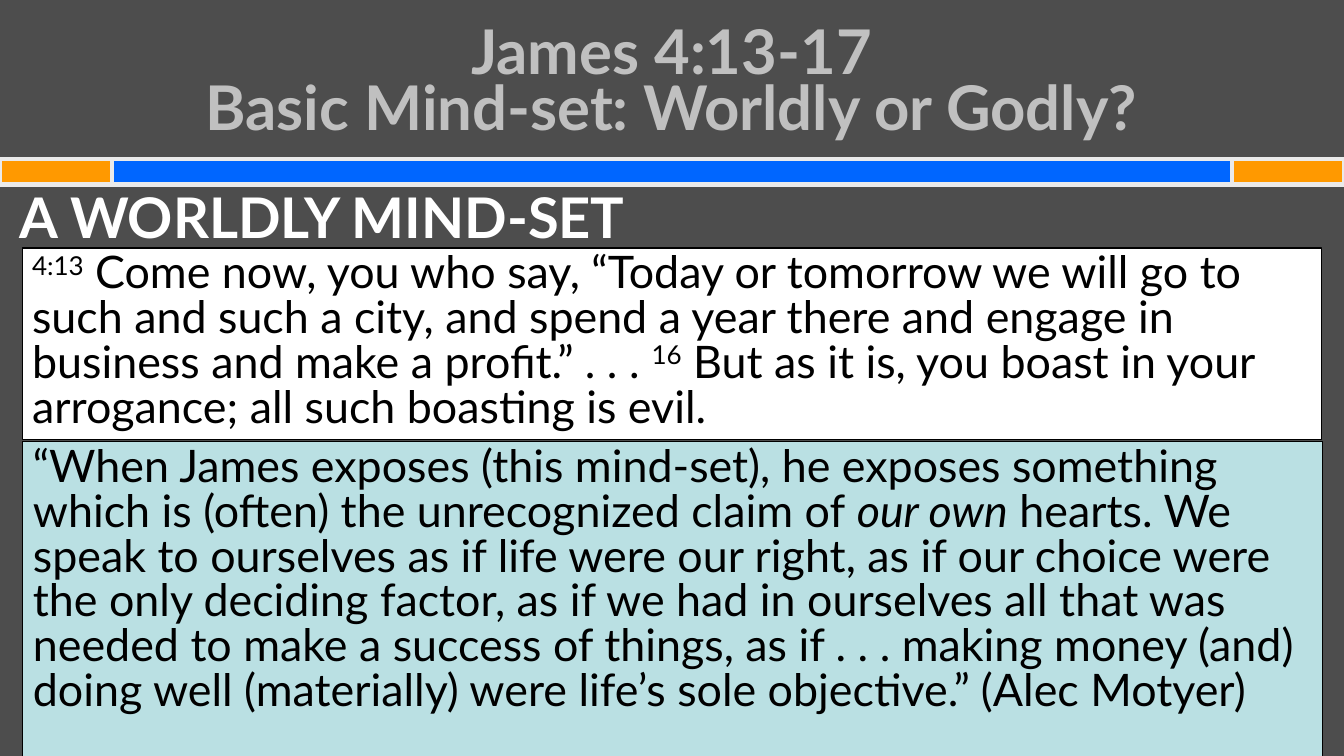
from pptx import Presentation
from pptx.dml.color import RGBColor
from pptx.enum.shapes import MSO_SHAPE
from pptx.enum.text import MSO_ANCHOR, PP_ALIGN
from pptx.util import Cm, Pt

RECTANGLE = MSO_SHAPE.RECTANGLE
TOP, MIDDLE = MSO_ANCHOR.TOP, MSO_ANCHOR.MIDDLE
LEFT, CENTER = PP_ALIGN.LEFT, PP_ALIGN.CENTER

CHARCOAL = RGBColor(0x4D, 0x4D, 0x4D)
SILVER = RGBColor(0xC0, 0xC0, 0xC0)
WHITE = RGBColor(0xFF, 0xFF, 0xFF)
BLACK = RGBColor(0, 0, 0)
BLUE = RGBColor(0x00, 0x66, 0xFF)
ORANGE = RGBColor(0xFF, 0x99, 0x00)
PALE_GRAY = RGBColor(0xEA, 0xEA, 0xEA)
PALE_TEAL = RGBColor(0xBA, 0xE0, 0xE3)
FONT = "Lato"
PAGE_WIDTH, PAGE_HEIGHT = 33.87, 19.05

TITLE = ["James 4:13-17", "Basic Mind-set: Worldly or Godly?"]
VERSE = [
    ("4:13", "super"),
    (" Come now, you who say, “Today or tomorrow we will go to such and such a city, "
     "and spend a year there and engage in business and make a profit.” . . . ", ""),
    ("16", "super"),
    (" But as it is, you boast in your arrogance; all such boasting is evil.", ""),
]
QUOTE = [
    ("“When James exposes (this mind-set), he exposes something which is (often) "
     "the unrecognized claim of ", ""),
    ("our own", "italic"),
    (" hearts. We speak to ourselves as if life were our right, as if our choice were "
     "the only deciding factor, as if we had in ourselves all that was needed to make "
     "a success of things, as if . . . making money (and) doing well (materially) "
     "were life’s sole objective.” (Alec Motyer)", ""),
]


def add_span(para, text, size=32, color=BLACK, bold=False, style=""):
    """Append formatted text to a paragraph."""
    span = para.add_run()
    span.text = text
    font = span.font
    font.name, font.size, font.bold = FONT, Pt(size), bold
    font.italic = style == "italic"
    font.color.rgb = color
    if style == "super":
        span._r.get_or_add_rPr().set("baseline", "30000")


def start_text(shape, spacing, align=LEFT, anchor=TOP):
    """Set up the text frame of a shape and return its first paragraph."""
    frame = shape.text_frame
    frame.word_wrap = True
    frame.vertical_anchor = anchor
    para = frame.paragraphs[0]
    para.alignment = align
    para.line_spacing = spacing
    return para


def add_panel(page, left, top, width, height, fill, line, weight):
    """Add a filled and outlined rectangle."""
    panel = page.shapes.add_shape(RECTANGLE, Cm(left), Cm(top), Cm(width), Cm(height))
    panel.shadow.inherit = False
    panel.fill.solid()
    panel.fill.fore_color.rgb = fill
    panel.line.color.rgb = line
    panel.line.width = Pt(weight)
    return panel


def add_divider(page, left, top, width, height):
    """Add the blue band with an orange block at each end."""
    block = width / 12
    for x, span_width, fill in ((left, width, BLUE), (left, block, ORANGE),
                                (left + width - block, block, ORANGE)):
        add_panel(page, x, top, span_width, height, fill, PALE_GRAY, 3)


def add_title(page, left, top, width, height):
    """Add the two-line centred title."""
    box = page.shapes.add_textbox(Cm(left), Cm(top), Cm(width), Cm(height))
    para = start_text(box, Pt(40), CENTER, MIDDLE)
    for number, text in enumerate(TITLE):
        if number:
            para.add_line_break()
        add_span(para, text, size=44, color=SILVER, bold=True)


def add_heading(page, left, top, width, height):
    """Add the section heading."""
    box = page.shapes.add_textbox(Cm(left), Cm(top), Cm(width), Cm(height))
    para = start_text(box, 0.7)
    para.space_before = Pt(14.4)
    add_span(para, "A WORLDLY MIND-SET", size=40, color=WHITE, bold=True)


def add_passage(page, left, top, width, height, fill, passage):
    """Add a passage of text on a filled panel."""
    panel = add_panel(page, left, top, width, height, fill, BLACK, 0.75)
    para = start_text(panel, Pt(32))
    for text, style in passage:
        add_span(para, text, style=style)


def main():
    """Build and save the deck."""
    deck = Presentation()
    deck.slide_width, deck.slide_height = Cm(PAGE_WIDTH), Cm(PAGE_HEIGHT)
    page = deck.slides.add_slide(deck.slide_layouts[6])
    page.background.fill.solid()
    page.background.fill.fore_color.rgb = CHARCOAL
    add_divider(page, 0, 4.01, PAGE_WIDTH, 0.64)
    add_title(page, 1.69, 0.76, 30.48, 2.84)
    add_heading(page, 0.25, 4.95, 32.89, 13.59)
    add_passage(page, 0.56, 6.25, 32.74, 4.83, WHITE, VERSE)
    add_passage(page, 0.58, 11.13, 32.74, 8.23, PALE_TEAL, QUOTE)
    deck.save("out.pptx")


if __name__ == "__main__":
    main()
